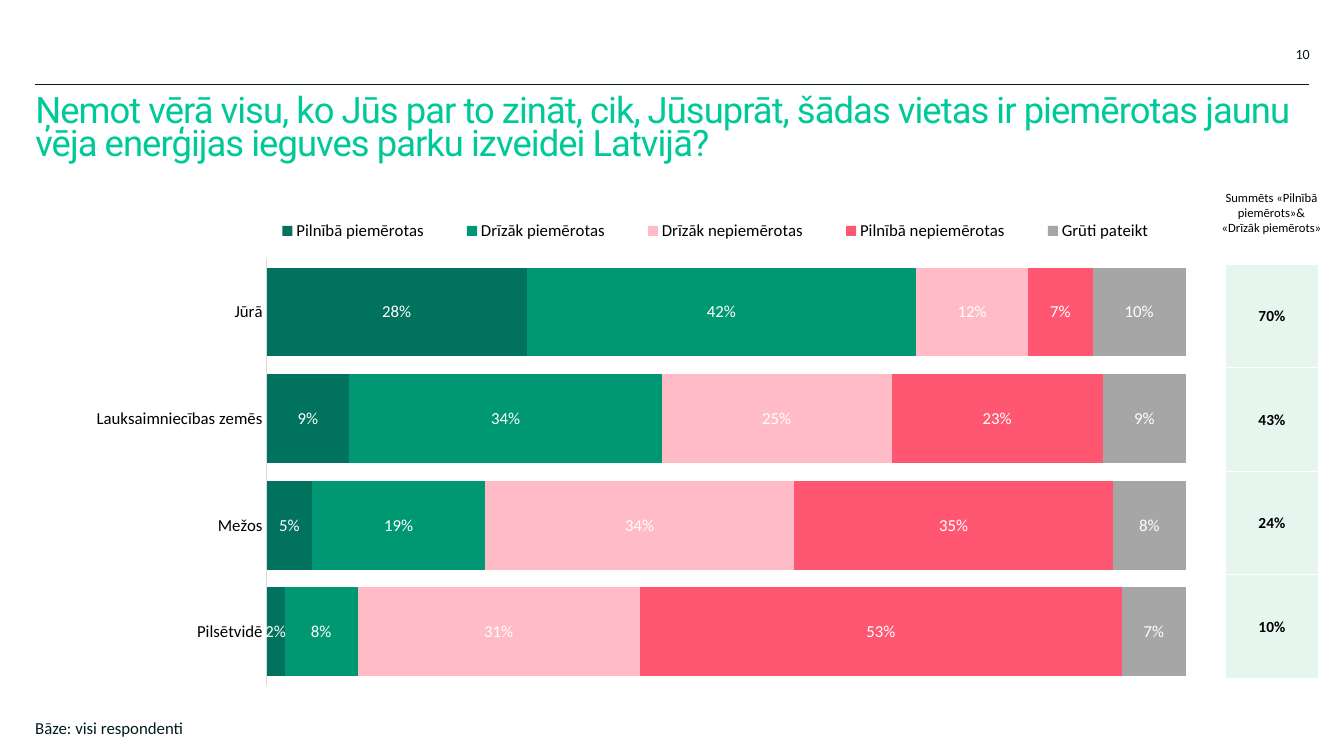
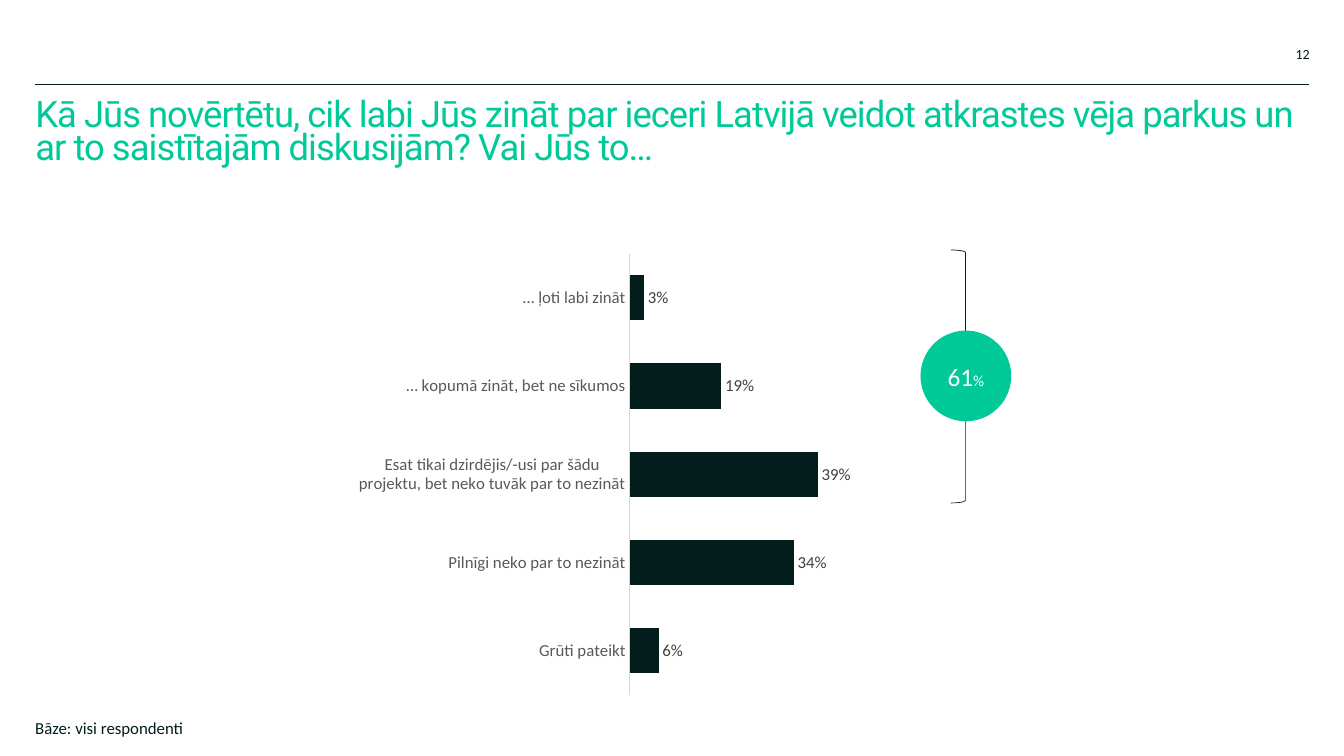
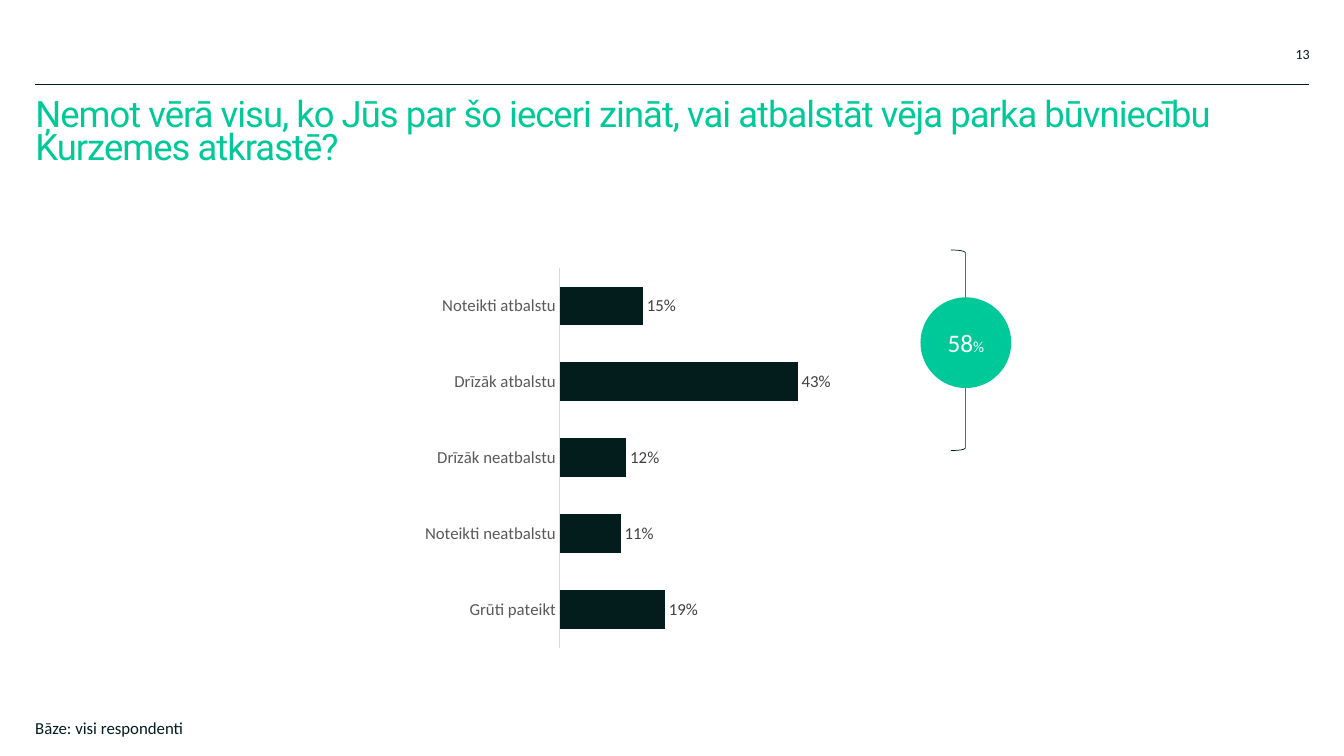
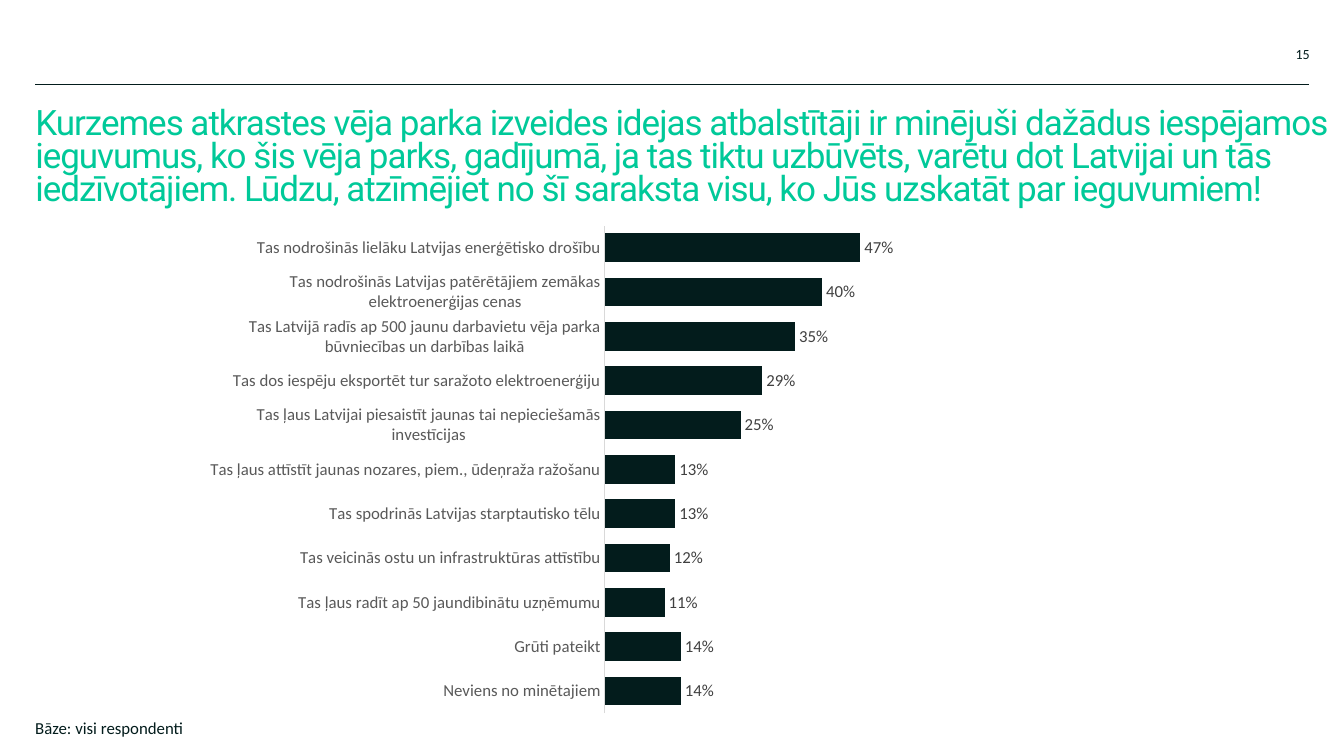
from lxml import etree
from pptx import Presentation
from pptx.chart.data import CategoryChartData
from pptx.dml.color import RGBColor
from pptx.enum.chart import XL_CHART_TYPE, XL_LABEL_POSITION, XL_LEGEND_POSITION, XL_TICK_MARK
from pptx.enum.shapes import MSO_CONNECTOR, MSO_SHAPE
from pptx.enum.text import MSO_ANCHOR, PP_ALIGN
from pptx.oxml import parse_xml
from pptx.oxml.ns import nsdecls, qn
from pptx.util import Inches, Pt

STACK = XL_CHART_TYPE.BAR_STACKED_100
BAR = XL_CHART_TYPE.BAR_CLUSTERED
OUT_END = XL_LABEL_POSITION.OUTSIDE_END
TOP_KEY = XL_LEGEND_POSITION.TOP
NO_TICK = XL_TICK_MARK.NONE
STRAIGHT = MSO_CONNECTOR.STRAIGHT
BRACE, OVAL = MSO_SHAPE.RIGHT_BRACE, MSO_SHAPE.OVAL
TOP, MIDDLE, BOTTOM = MSO_ANCHOR.TOP, MSO_ANCHOR.MIDDLE, MSO_ANCHOR.BOTTOM
LEFT, CENTER, RIGHT = PP_ALIGN.LEFT, PP_ALIGN.CENTER, PP_ALIGN.RIGHT

HEX = {
    "ink": "031C1C", "mint": "00C999", "black": "000000", "white": "FFFFFF",
    "axis": "D9D9D9", "label": "595959", "value": "404040", "cell": "E7F5EF",
    "deep": "00725D", "green": "009773", "pink": "FFBCC7", "red": "FF5772",
    "gray": "A6A6A6",
}
RGB = {name: RGBColor.from_string(code) for name, code in HEX.items()}
BODY, HEAD = "Calibri", "Roboto"

# Title, page number and title position of each slide
PAGES = [
    dict(num="10", top=1.02, width=12.62, size=26,
         title="Ņemot vērā visu, ko Jūs par to zināt, cik, Jūsuprāt, šādas vietas ir "
               "piemērotas jaunu vēja enerģijas ieguves parku izveidei Latvijā?"),
    dict(num="12", top=1.06, width=12.62, size=26,
         title="Kā Jūs novērtētu, cik labi Jūs zināt par ieceri Latvijā veidot atkrastes "
               "vēja parkus un ar to saistītajām diskusijām? Vai Jūs to…"),
    dict(num="13", top=1.06, width=12.62, size=26,
         title="Ņemot vērā visu, ko Jūs par šo ieceri zināt, vai atbalstāt vēja parka "
               "būvniecību Kurzemes atkrastē?"),
    dict(num="15", top=1.3, width=12.82, size=25,
         title="Kurzemes atkrastes vēja parka izveides idejas atbalstītāji ir minējuši "
               "dažādus iespējamos ieguvumus, ko šis vēja parks, gadījumā, ja tas tiktu "
               "uzbūvēts, varētu dot Latvijai un tās iedzīvotājiem. Lūdzu, atzīmējiet no "
               "šī saraksta visu, ko Jūs uzskatāt par ieguvumiem!"),
]

# Stacked chart: name, colour, one value per place
PLACES = ["Jūrā", "Lauksaimniecības zemēs", "Mežos", "Pilsētvidē"]
FIT = [
    ("Pilnībā piemērotas", "deep", [0.28, 0.09, 0.05, 0.02]),
    ("Drīzāk piemērotas", "green", [0.42, 0.34, 0.19, 0.08]),
    ("Drīzāk nepiemērotas", "pink", [0.12, 0.25, 0.34, 0.31]),
    ("Pilnībā nepiemērotas", "red", [0.07, 0.23, 0.35, 0.53]),
    ("Grūti pateikt", "gray", [0.1, 0.09, 0.08, 0.07]),
]
SUMS = ["70%", "43%", "24%", "10%"]

# Plain bar charts: slide index, box, plot area, gap, answers
BARS = [
    (1, (3.49, 2.48, 9.03, 4.42), (0.305, 0.008, 0.53, 0.992), 95, {
        "… ļoti labi zināt": 0.03,
        "… kopumā zināt, bet ne sīkumos": 0.19,
        "Esat tikai dzirdējis/-usi par šādu projektu, bet neko tuvāk par to nezināt": 0.39,
        "Pilnīgi neko par to nezināt": 0.34,
        "Grūti pateikt": 0.06}),
    (2, (3.47, 2.63, 9.06, 3.8), (0.23, 0.008, 0.605, 0.992), 95, {
        "Noteikti atbalstu": 0.15,
        "Drīzāk atbalstu": 0.43,
        "Drīzāk neatbalstu": 0.12,
        "Noteikti neatbalstu": 0.11,
        "Grūti pateikt": 0.19}),
    (3, (1.99, 2.2, 11.26, 4.88), (0.356, 0.008, 0.479, 0.992), 55, {
        "Tas nodrošinās lielāku Latvijas enerģētisko drošību": 0.47,
        "Tas nodrošinās Latvijas patērētājiem zemākas elektroenerģijas cenas": 0.4,
        "Tas Latvijā radīs ap 500 jaunu darbavietu vēja parka būvniecības un darbības laikā": 0.35,
        "Tas dos iespēju eksportēt tur saražoto elektroenerģiju": 0.29,
        "Tas ļaus Latvijai piesaistīt jaunas tai nepieciešamās investīcijas": 0.25,
        "Tas ļaus attīstīt jaunas nozares, piem., ūdeņraža ražošanu": 0.13,
        "Tas spodrinās Latvijas starptautisko tēlu": 0.13,
        "Tas veicinās ostu un infrastruktūras attīstību": 0.12,
        "Tas ļaus radīt ap 50 jaundibinātu uzņēmumu": 0.11,
        "Grūti pateikt": 0.14,
        "Neviens no minētajiem": 0.14}),
]

# Totals: slide index, brace height, circle top, number
TOTALS = [(1, 2.51, 3.28, "61"), (2, 1.99, 2.95, "58")]


def add_text(slide, box, text, size, color, align=LEFT, anchor=TOP, font=BODY, inset=0):
    """Add a one-paragraph text box and return its paragraph."""
    frame = slide.shapes.add_textbox(*map(Inches, box)).text_frame
    frame.word_wrap = True
    frame.vertical_anchor = anchor
    frame.margin_left = frame.margin_right = Inches(inset)
    frame.margin_top = frame.margin_bottom = Inches(inset / 2)
    para = frame.paragraphs[0]
    para.text = text
    para.alignment = align
    face = para.runs[0].font
    face.name, face.size, face.color.rgb = font, Pt(size), RGB[color]
    return para


def add_bars(slide, kind, box, area, gap, cats, rows, axis, value):
    """Add a bar chart with a hidden value axis and a fixed plot area."""
    data = CategoryChartData(number_format="0%")
    data.categories = cats
    for name, _, vals in rows:
        data.add_series(name, vals)
    chart = slide.shapes.add_chart(kind, *map(Inches, box), data).chart
    chart.has_title = chart.has_legend = False
    chart.font.name, chart.font.size = BODY, Pt(12)
    chart.font.color.rgb = RGB["black"]

    side = chart.category_axis
    side.reverse_order = True
    side.major_tick_mark = side.minor_tick_mark = NO_TICK
    side.format.line.color.rgb, side.format.line.width = RGB["axis"], Pt(0.75)
    side.tick_labels.font.name, side.tick_labels.font.size = BODY, Pt(12)
    side.tick_labels.font.color.rgb = RGB[axis]
    scale = chart.value_axis
    scale.visible = scale.has_major_gridlines = False
    scale.minimum_scale, scale.maximum_scale = 0, 1

    plot = chart.plots[0]
    plot.gap_width, plot.vary_by_categories = gap, False
    for series, (_, color, _) in zip(plot.series, rows):
        series.format.fill.solid()
        series.format.fill.fore_color.rgb = RGB[color]
        tags = series.data_labels
        tags.show_value = True
        tags.number_format, tags.number_format_is_linked = "0%", False
        tags.font.name, tags.font.size, tags.font.color.rgb = BODY, Pt(12), RGB[value]
        if kind == BAR:
            tags.position = OUT_END

    # Plot area placed by fractions of the chart
    plane = chart.element.find(".//" + qn("c:plotArea"))
    for old in plane.findall(qn("c:layout")):
        plane.remove(old)
    parts = "".join(f'<c:{tag} val="{val}"/>' for tag, val in zip("xywh", area))
    plane.insert(0, parse_xml(
        f'<c:layout {nsdecls("c")}><c:manualLayout><c:layoutTarget val="inner"/>'
        f'<c:xMode val="edge"/><c:yMode val="edge"/>{parts}</c:manualLayout></c:layout>'))
    return chart


deck = Presentation()
deck.slide_width, deck.slide_height = Inches(13.33), Inches(7.5)

# Rule, title, page number and base note on every slide
for page in PAGES:
    slide = deck.slides.add_slide(deck.slide_layouts[6])
    rule = slide.shapes.add_connector(
        STRAIGHT, Inches(0.35), Inches(0.84), Inches(12.98), Inches(0.84))
    rule.line.color.rgb, rule.line.width = RGB["ink"], Pt(0.5)
    etree.SubElement(rule._element.spPr, qn("a:effectLst"))
    title = add_text(slide, (0.35, page["top"], page["width"], 0.55), page["title"],
                     page["size"], "mint", anchor=MIDDLE, font=HEAD)
    title.line_spacing = Pt(23.5)
    title.runs[0]._r.get_or_add_rPr().set("spc", "-70")
    add_text(slide, (12.06, 0.42, 0.93, 0.2), page["num"], 10, "ink", RIGHT, BOTTOM)
    note = add_text(slide, (0.35, 7.1, 11.4, 0.26), "Bāze: visi respondenti", 12, "ink")
    note.line_spacing = 1.1

# Stacked chart with a legend on top
first = deck.slides[0]
chart = add_bars(first, STACK, (0.52, 1.96, 11.24, 5.1), (0.189, 0.119, 0.811, 0.83),
                 20, PLACES, FIT, "black", "white")
chart.plots[0].overlap = 100
chart.has_legend = True
legend = chart.legend
legend.position, legend.include_in_layout = TOP_KEY, False
legend.font.name, legend.font.size, legend.font.color.rgb = BODY, Pt(12), RGB["black"]
legend._element.find(qn("c:legendPos")).addnext(parse_xml(
    f'<c:layout {nsdecls("c")}><c:manualLayout><c:xMode val="edge"/><c:yMode val="edge"/>'
    '<c:x val="0.17"/><c:y val="0.03"/><c:w val="0.83"/><c:h val="0.07"/>'
    '</c:manualLayout></c:layout>'))

# Column of sums beside the stacked chart
grid = first.shapes.add_table(
    len(SUMS), 1, Inches(12.15), Inches(2.62), Inches(0.93), Inches(4.11)).table
grid.first_row = grid.horz_banding = False
for row, total in enumerate(SUMS):
    cell = grid.cell(row, 0)
    cell.text_frame.text = total
    cell.vertical_anchor = MIDDLE
    cell.margin_left = cell.margin_right = cell.margin_top = Inches(0.01)
    cell.margin_bottom = 0
    para = cell.text_frame.paragraphs[0]
    para.alignment = CENTER
    face = para.runs[0].font
    face.name, face.size, face.bold, face.color.rgb = BODY, Pt(11), True, RGB["black"]
    props = cell._tc.get_or_add_tcPr()
    for edge in ("lnL", "lnR", "lnT", "lnB"):
        props.append(parse_xml(
            f'<a:{edge} {nsdecls("a")} w="12700"><a:solidFill>'
            f'<a:srgbClr val="{HEX["white"]}"/></a:solidFill></a:{edge}>'))
    cell.fill.solid()
    cell.fill.fore_color.rgb = RGB["cell"]
add_text(first, (11.99, 1.83, 1.24, 0.71), "Summēts «Pilnībā piemērots»& «Drīzāk piemērots»",
         9, "black", CENTER, inset=0.1)

# Plain bar charts
for index, box, area, gap, answers in BARS:
    add_bars(deck.slides[index], BAR, box, area, gap, list(answers),
             [("Series 1", "ink", list(answers.values()))], "label", "value")

# Brace and circle with the total of the answers it spans
for index, height, top, number in TOTALS:
    shapes = deck.slides[index].shapes
    brace = shapes.add_shape(BRACE, Inches(9.43), Inches(2.48), Inches(0.29), Inches(height))
    brace.shadow.inherit = False
    brace.fill.background()
    brace.line.color.rgb, brace.line.width = RGB["ink"], Pt(0.5)
    disc = shapes.add_shape(OVAL, Inches(9.13), Inches(top), Inches(0.9), Inches(0.9))
    disc.shadow.inherit = False
    disc.fill.solid()
    disc.fill.fore_color.rgb = RGB["mint"]
    disc.line.fill.background()
    disc.text_frame.vertical_anchor = MIDDLE
    para = disc.text_frame.paragraphs[0]
    para.alignment = CENTER
    for text, size in ((number, 18), ("%", 11)):
        run = para.add_run()
        run.text = text
        run.font.name, run.font.size, run.font.color.rgb = BODY, Pt(size), RGB["white"]

deck.save("out.pptx")
